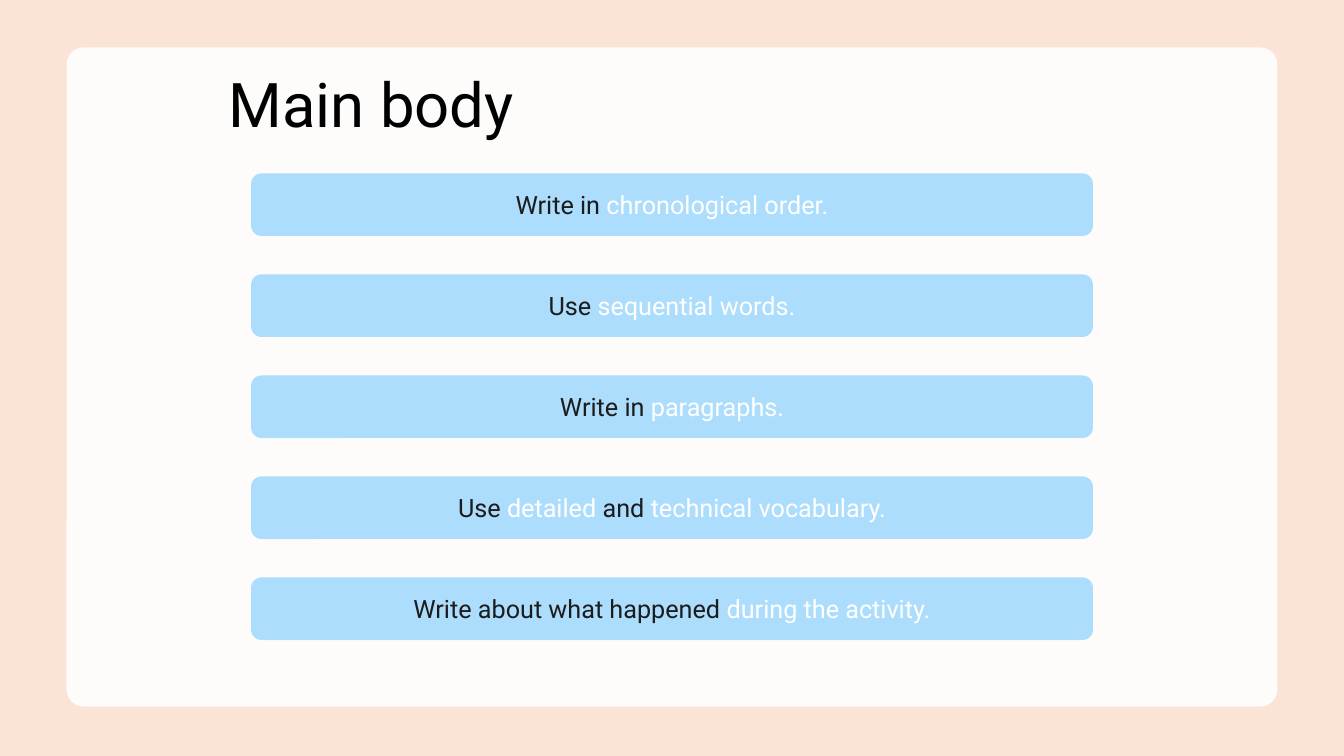
from lxml import etree
from pptx import Presentation
from pptx.dml.color import RGBColor
from pptx.enum.shapes import MSO_SHAPE as SHAPE
from pptx.enum.text import MSO_ANCHOR as ANCHOR, PP_ALIGN as ALIGN
from pptx.oxml.ns import qn
from pptx.util import Inches, Pt

PEACH = RGBColor(0xFB, 0xE3, 0xD6)
SKY = RGBColor(0xAC, 0xDD, 0xFC)
WHITE = RGBColor(0xFF, 0xFF, 0xFF)
BLACK = RGBColor(0, 0, 0)
INK = RGBColor(0x1C, 0x1C, 0x1C)
FONT = "Roboto"

# Each tip alternates plain and highlighted wording.
TIPS = [
    ["Write in ", "chronological order."],
    ["Use ", "sequential words."],
    ["Write in ", "paragraphs."],
    ["Use ", "detailed", " and ", "technical vocabulary."],
    ["Write about what happened ", "during the activity."],
]
BAR_SHARE = 0.62  # share of each row's pitch that its bar fills


def style(r, size, color):
    r.font.name, r.font.size, r.font.color.rgb = FONT, Pt(size), color


def add_panel(s, box, color):
    sp = s.shapes.add_shape(SHAPE.ROUNDED_RECTANGLE, *map(Inches, box))
    sp.shadow.inherit = False
    sp.fill.solid()
    sp.fill.fore_color.rgb = color
    sp.line.fill.background()
    return sp


def add_card(s, box):
    """Place the slightly see-through white backing card."""
    sp = add_panel(s, box, WHITE)
    sp.adjustments[0] = 0.026
    color = sp.fill._xPr.find(qn("a:solidFill"))[0]
    etree.SubElement(color, qn("a:alpha"), val="90000")


def add_title(s, box, text):
    tf = s.shapes.add_textbox(*map(Inches, box)).text_frame
    tf.word_wrap = True
    tf.vertical_anchor = ANCHOR.MIDDLE
    p = tf.paragraphs[0]
    p.text = text
    p.line_spacing = 0.9
    style(p.runs[0], 44, BLACK)


def add_tip(s, box, parts):
    tf = add_panel(s, box, SKY).text_frame
    tf.word_wrap = True
    tf.vertical_anchor = ANCHOR.MIDDLE
    tf.margin_left = tf.margin_right = Inches(0.12)
    tf.margin_top = tf.margin_bottom = Inches(0.12)
    p = tf.paragraphs[0]
    p.alignment = ALIGN.CENTER
    for i, part in enumerate(parts):
        r = p.add_run()
        r.text = part
        style(r, 18, WHITE if i % 2 else INK)


def add_tips(s, box, tips):
    """Stack one bar per tip, with the last bar ending at the box's foot."""
    x, y, w, h = box
    pitch = h / (len(tips) - 1 + BAR_SHARE)
    for i, parts in enumerate(tips):
        add_tip(s, (x, y + i * pitch, w, pitch * BAR_SHARE), parts)


def main():
    prs = Presentation()
    prs.slide_width, prs.slide_height = Inches(13.33), Inches(7.5)
    s = prs.slides.add_slide(prs.slide_layouts[6])
    s.background.fill.solid()
    s.background.fill.fore_color.rgb = PEACH
    add_card(s, (0.66, 0.47, 12.01, 6.54))
    add_title(s, (2.17, 0.52, 8.99, 1.09), "Main body")
    add_tips(s, (2.49, 1.72, 8.35, 4.63), TIPS)
    prs.save("out.pptx")


if __name__ == "__main__":
    main()
